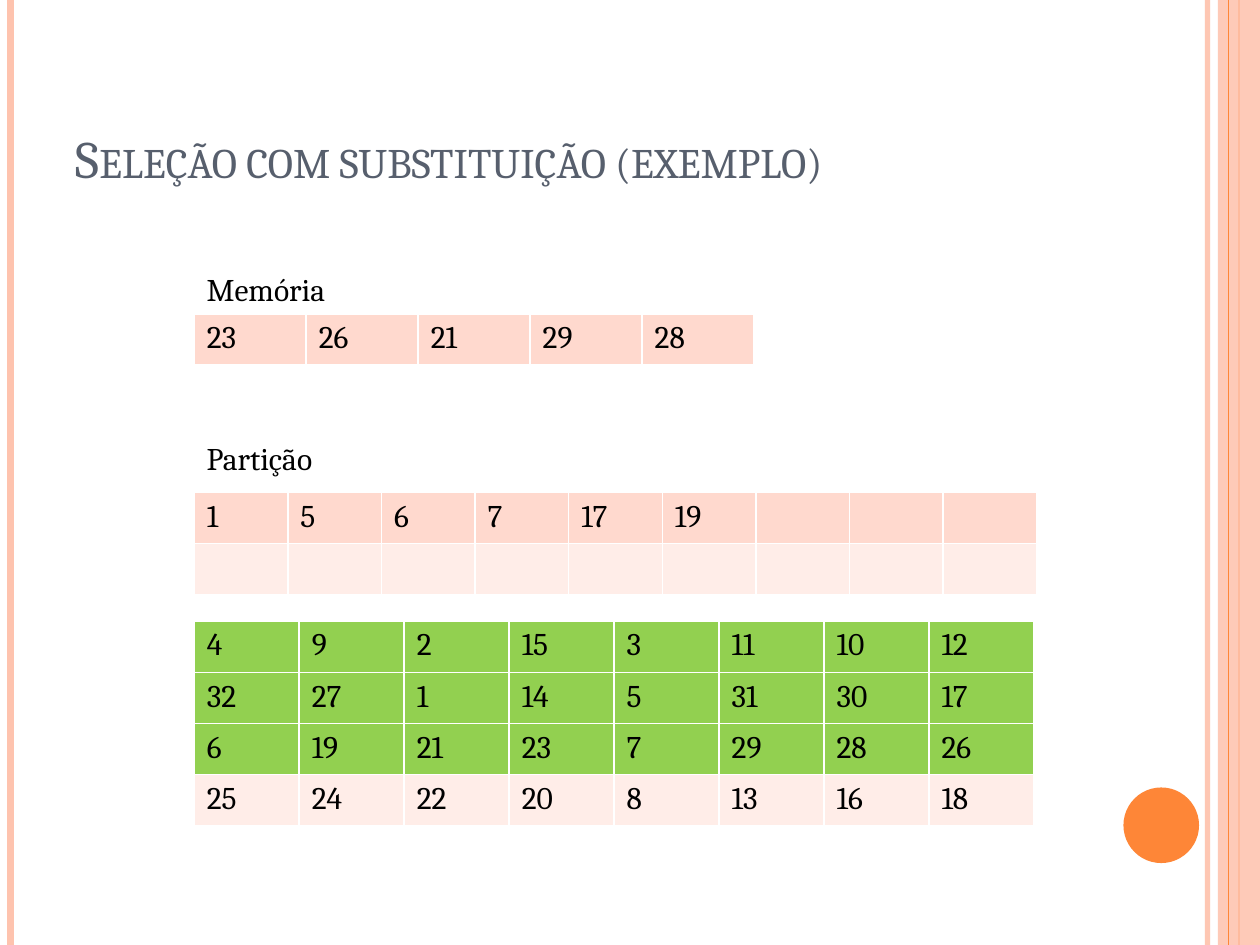
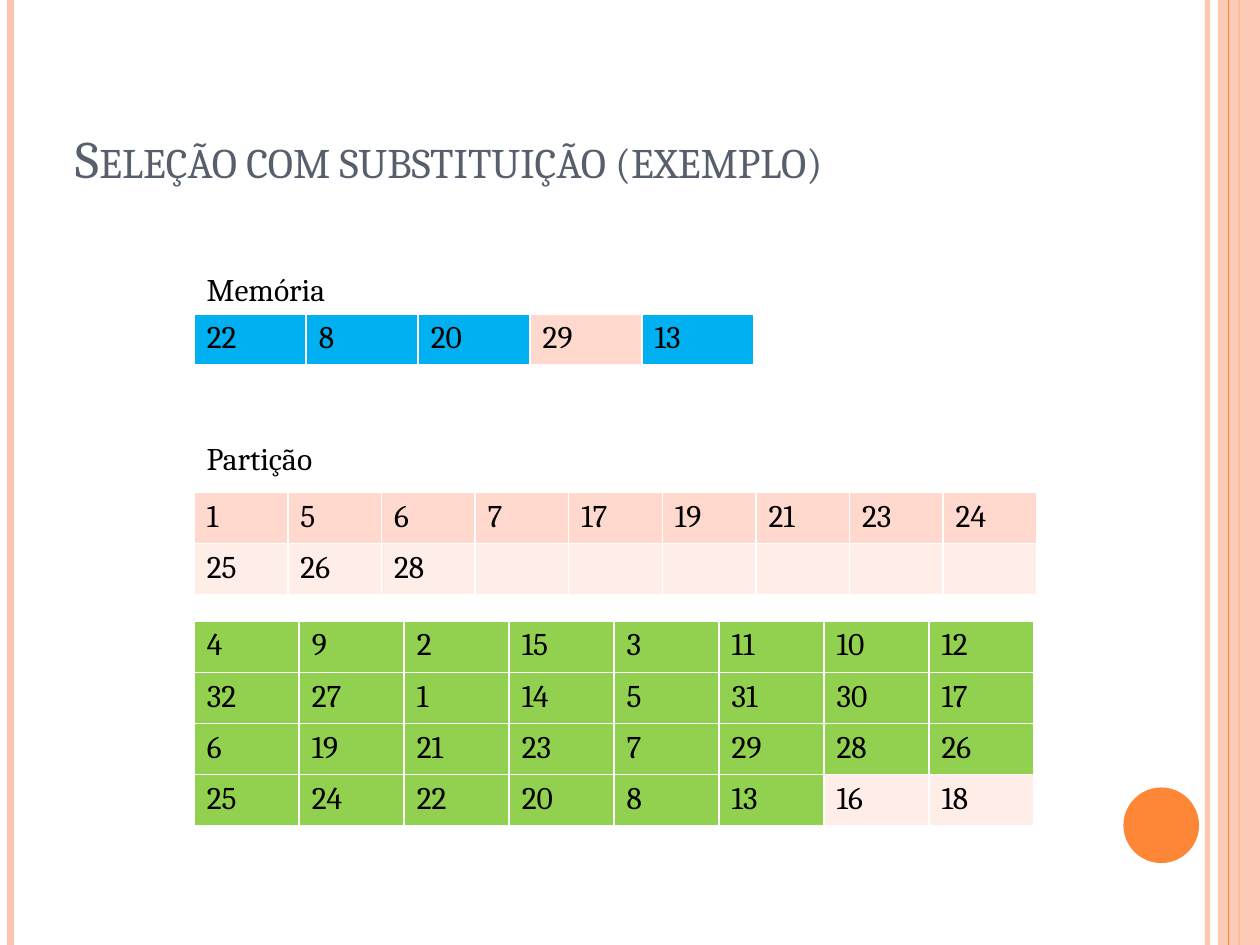
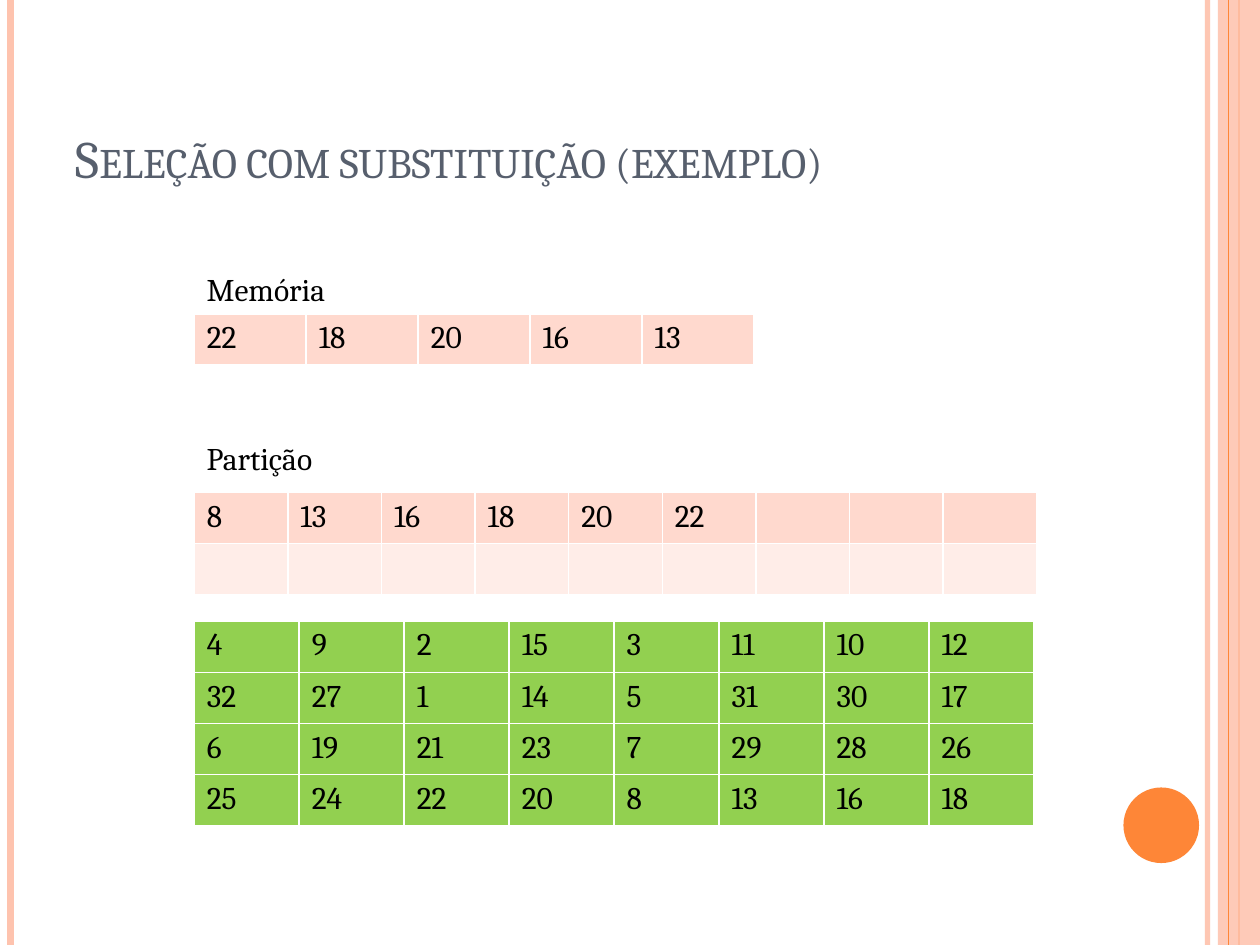
"""Build three slides that trace replacement selection over memory, partition and input."""
from lxml.etree import SubElement as Sub
from pptx import Presentation
from pptx.dml.color import RGBColor as RGB
from pptx.enum.shapes import MSO_CONNECTOR as Link, MSO_SHAPE as Form
from pptx.enum.text import MSO_ANCHOR as Anchor, MSO_AUTO_SIZE as Fit, PP_ALIGN as Align
from pptx.oxml.ns import qn
from pptx.util import Pt

FONT = "Cambria"
BLACK = RGB(0x00, 0x00, 0x00)
SLATE = RGB(0x57, 0x5F, 0x6D)
ORANGE = RGB(0xFE, 0x86, 0x37)
PEACH = RGB(0xFE, 0xC3, 0xAE)
ROSE = RGB(0xFF, 0xD9, 0xCE)
PALE = RGB(0xFF, 0xED, 0xE8)
GREEN = RGB(0x92, 0xD0, 0x50)
BLUE = RGB(0x00, 0xB0, 0xF0)

WIDE, HIGH = 720, 540
LEFT = 111
ROW = 29.2
TITLE = "Seleção com substituição (exemplo)"
LABELS = [("Memória", 151, 90), ("Partição", 247.5, 85)]
STRIP = 696
BANDS = [
    (690, PEACH, 3, 93),
    (6, PEACH, 4.5, 100),
    (708, ORANGE, 1.5, 100),
    (STRIP, PEACH, 0, 87),
    (702, ORANGE, 0.75, 100),
]
INPUT = [
    [4, 9, 2, 15, 3, 11, 10, 12],
    [32, 27, 1, 14, 5, 31, 30, 17],
    [6, 19, 21, 23, 7, 29, 28, 26],
    [25, 24, 22, 20, 8, 13, 16, 18],
]
STEPS = [
    {"memory": [23, 26, 21, 29, 28], "frozen": [],
     "sorted": [1, 5, 6, 7, 17, 19], "read": 24},
    {"memory": [22, 8, 20, 29, 13], "frozen": [22, 8, 20, 13],
     "sorted": [1, 5, 6, 7, 17, 19, 21, 23, 24, 25, 26, 28], "read": 30},
    {"memory": [22, 18, 20, 16, 13], "frozen": [],
     "sorted": [8, 13, 16, 18, 20, 22], "read": 32},
]


def write(frame, text, size=18, color=BLACK):
    run = frame.paragraphs[0].add_run()
    run.text = str(text)
    run.font.name, run.font.size, run.font.color.rgb = FONT, Pt(size), color
    return run


def grid(slide, top, step, rows, fills):
    cols = len(rows[0])
    table = slide.shapes.add_table(
        len(rows), cols, Pt(LEFT), Pt(top), Pt(step * cols), Pt(ROW * len(rows))).table
    table.first_row = table.horz_banding = False
    for col in table.columns:
        col.width = Pt(step)
    for r, row in enumerate(rows):
        table.rows[r].height = Pt(ROW)
        for c, value in enumerate(row):
            cell = table.cell(r, c)
            props = cell._tc.get_or_add_tcPr()
            for side in ("a:lnL", "a:lnR", "a:lnT", "a:lnB"):
                edge = Sub(props, qn(side), w=str(Pt(1)))
                Sub(Sub(edge, qn("a:solidFill")), qn("a:srgbClr"), val="FFFFFF")
            cell.fill.solid()
            cell.fill.fore_color.rgb = fills[r][c]
            if value is not None:
                write(cell.text_frame, value)


deck = Presentation()
deck.slide_width, deck.slide_height = Pt(WIDE), Pt(HIGH)

for step in STEPS:
    slide = deck.slides.add_slide(deck.slide_layouts[5])
    shapes = slide.shapes

    for x, color, weight, solid in BANDS:
        if x == STRIP:
            band = shapes.add_shape(Form.RECTANGLE, Pt(x), 0, Pt(WIDE - x), Pt(HIGH))
            band.shadow.inherit = False
            band.line.fill.background()
            band.fill.solid()
            band.fill.fore_color.rgb = color
        else:
            band = shapes.add_connector(Link.STRAIGHT, Pt(x), 0, Pt(x), Pt(HIGH))
            band.line.color.rgb, band.line.width = color, Pt(weight)
            Sub(band.element.spPr, qn("a:effectLst"))
        if solid < 100:
            tint = band.element.spPr.find(".//" + qn("a:srgbClr"))
            Sub(tint, qn("a:alpha"), val=str(solid * 1000))

    disc = shapes.add_shape(Form.OVAL, Pt(642), Pt(450), Pt(43.2), Pt(43.2))
    disc.shadow.inherit = False
    disc.line.fill.background()
    disc.fill.solid()
    disc.fill.fore_color.rgb = ORANGE

    title = shapes.title
    title.left, title.top, title.width, title.height = Pt(36), Pt(21.6), Pt(588), Pt(90)
    frame = title.text_frame
    frame.auto_size, frame.vertical_anchor = Fit.NONE, Anchor.BOTTOM
    frame.paragraphs[0].alignment = Align.LEFT
    head = write(frame, TITLE, 30, SLATE)
    head.font._element.set("cap", "small")

    shades = [[GREEN if r * 8 + c < step["read"] else PALE for c in range(8)]
              for r in range(4)]
    grid(slide, 355, 60, INPUT, shades)

    memory = step["memory"]
    grid(slide, 179.5, 64, [memory],
         [[BLUE if n in step["frozen"] else ROSE for n in memory]])

    slots = step["sorted"] + [None] * (18 - len(step["sorted"]))
    grid(slide, 281.5, 53.5, [slots[:9], slots[9:]], [[ROSE] * 9, [PALE] * 9])

    for text, top, width in LABELS:
        label = shapes.add_textbox(Pt(LEFT), Pt(top), Pt(width), Pt(29))
        label.text_frame.word_wrap = False
        label.text_frame.auto_size = Fit.SHAPE_TO_FIT_TEXT
        write(label.text_frame, text)

deck.save("out.pptx")
